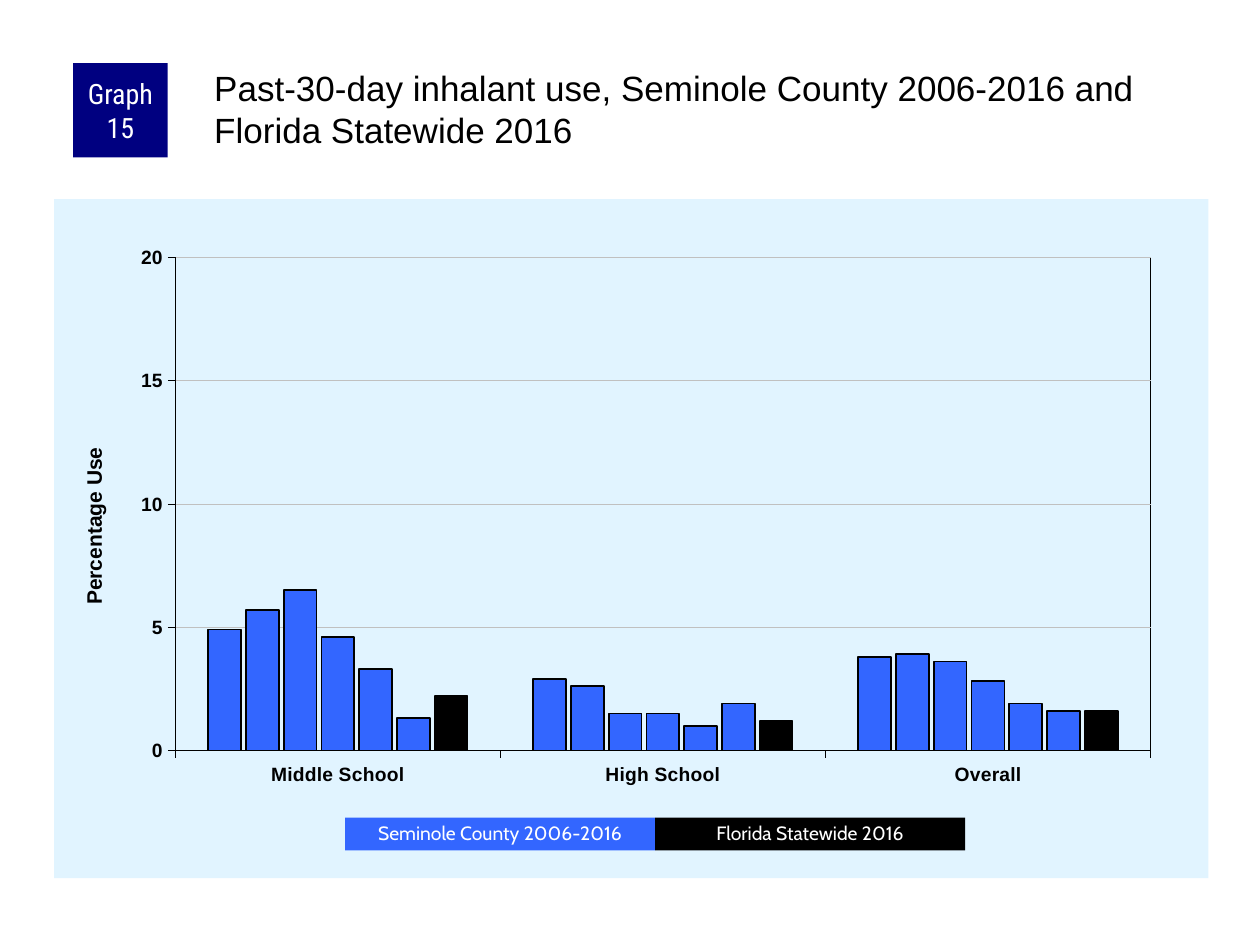
from dataclasses import dataclass

from lxml import etree
from pptx import Presentation
from pptx import util as u
from pptx.chart.data import CategoryChartData
from pptx.dml.color import RGBColor
from pptx.enum import chart as charts, shapes, text
from pptx.oxml import parse_xml
from pptx.oxml.ns import nsdecls, qn


@dataclass(frozen=True)
class Theme:
    navy: str = "000080"
    county: str = "3366FF"
    state: str = "000000"
    panel: str = "E1F4FF"
    grid: str = "C0C0C0"
    ink: str = "000000"
    light: str = "FFFFFF"
    body_font: str = "Arial"
    badge_font: str = "Roboto Condensed"
    legend_font: str = "Cabin"
    title_size: int = 20
    badge_size: int = 16
    axis_title_size: int = 12
    label_size: int = 11
    base_size: int = 8


THEME = Theme()
CATEGORIES = ["Middle School", "High School", "Overall"]
COUNTY_SERIES = [
    (4.9, 2.9, 3.8),
    (5.7, 2.6, 3.9),
    (6.5, 1.5, 3.6),
    (4.6, 1.5, 2.8),
    (3.3, 1, 1.9),
    (1.3, 1.9, 1.6),
]
STATE_SERIES = (2.2, 1.2, 1.6)


def set_font(font, size, color=THEME.ink, name=THEME.body_font, bold=False):
    font.size = u.Pt(size)
    font.name = name
    font.bold = bold
    font.color.rgb = RGBColor.from_string(color)


def write_text(frame, words, size, color=THEME.ink, name=THEME.body_font,
               align=text.PP_ALIGN.LEFT, anchor=text.MSO_ANCHOR.TOP,
               spacing=None, insets=(0.1, 0.05, 0.1, 0.05)):
    """Fill a text frame; insets are left, top, right, bottom in inches."""
    frame.word_wrap = True
    frame.auto_size = text.MSO_AUTO_SIZE.NONE
    frame.vertical_anchor = anchor
    (frame.margin_left, frame.margin_top,
     frame.margin_right, frame.margin_bottom) = map(u.Inches, insets)
    para = frame.paragraphs[0]
    para.alignment = align
    if spacing:
        para.line_spacing = spacing
    span = para.add_run()
    span.text = words
    set_font(span.font, size, color, name)


def set_line(line, color, width):
    line.color.rgb = RGBColor.from_string(color)
    line.width = u.Pt(width)


def area_style(fill=None, line=None):
    """Return chart shape properties with an optional fill and outline."""
    def solid(color):
        if color is None:
            return "<a:noFill/>"
        return f'<a:solidFill><a:srgbClr val="{color}"/></a:solidFill>'
    return parse_xml(f'<c:spPr {nsdecls("c", "a")}>{solid(fill)}'
                     f'<a:ln w="{u.Pt(0.25)}">{solid(line)}</a:ln></c:spPr>')


def manual_layout(inner=False, **places):
    """Return a chart layout whose places are fractions of the chart."""
    layout = etree.Element(qn("c:layout"))
    manual = etree.SubElement(layout, qn("c:manualLayout"))
    if inner:
        etree.SubElement(manual, qn("c:layoutTarget")).set("val", "inner")
    for mode in ("xMode", "yMode"):
        etree.SubElement(manual, qn(f"c:{mode}")).set("val", "edge")
    for key, value in places.items():
        etree.SubElement(manual, qn(f"c:{key}")).set("val", str(value))
    return layout


def replace_layout(parent, index, layout):
    for old in parent.findall(qn("c:layout")):
        parent.remove(old)
    parent.insert(index, layout)


class GraphPage:
    """Holds the theme and the slide being drawn."""

    def __init__(self, page, theme):
        self.page = page
        self.theme = theme

    def title(self, words, left, top, width, height):
        box = self.page.shapes.title
        box.left, box.top, box.width, box.height = map(
            u.Inches, (left, top, width, height))
        write_text(box.text_frame, words, self.theme.title_size,
                   insets=(0.03, 0.03, 0, 0))

    def label(self, words, left, top, width, height, fill, **style):
        box = self.page.shapes.add_shape(
            shapes.MSO_SHAPE.RECTANGLE,
            *map(u.Inches, (left, top, width, height)))
        box.shadow.inherit = False
        box.fill.solid()
        box.fill.fore_color.rgb = RGBColor.from_string(fill)
        box.line.fill.background()
        write_text(box.text_frame, words, color=self.theme.light,
                   align=text.PP_ALIGN.CENTER,
                   anchor=text.MSO_ANCHOR.MIDDLE, **style)

    def column_chart(self, left, top, width, height):
        theme = self.theme
        data = CategoryChartData()
        data.categories = CATEGORIES
        for number, values in enumerate([*COUNTY_SERIES, STATE_SERIES], 1):
            data.add_series(f"Series {number}", values)
        chart = self.page.shapes.add_chart(
            charts.XL_CHART_TYPE.COLUMN_CLUSTERED,
            *map(u.Inches, (left, top, width, height)), data).chart
        chart.has_legend = False
        chart.has_title = False
        set_font(chart.font, theme.base_size)

        plot = chart.plots[0]
        plot.gap_width = 200
        plot.overlap = -15
        plot.vary_by_categories = False
        colors = [theme.county] * len(COUNTY_SERIES) + [theme.state]
        for series, color in zip(plot.series, colors):
            series.format.fill.solid()
            series.format.fill.fore_color.rgb = RGBColor.from_string(color)
            set_line(series.format.line, theme.ink, 1)
        self.axes(chart)

        root = chart.element
        root.find(qn("c:chart")).addnext(area_style(fill=theme.panel))
        area = root.find(".//" + qn("c:plotArea"))
        replace_layout(area, 0, manual_layout(
            inner=True, x=0.105, y=0.086, w=0.845, h=0.726))
        area.append(area_style(line=theme.ink))

    def axes(self, chart):
        theme = self.theme
        for axis in (chart.category_axis, chart.value_axis):
            axis.major_tick_mark = charts.XL_TICK_MARK.OUTSIDE
            axis.minor_tick_mark = charts.XL_TICK_MARK.NONE
            set_font(axis.tick_labels.font, theme.label_size, bold=True)
            set_line(axis.format.line, theme.ink, 0.25)
        scale = chart.value_axis
        scale.minimum_scale, scale.maximum_scale = 0, 20
        scale.major_unit = 5
        scale.has_major_gridlines = True
        set_line(scale.major_gridlines.format.line, theme.grid, 0.25)
        scale.tick_labels.number_format = "0"
        scale.tick_labels.number_format_is_linked = False

        frame = scale.axis_title.text_frame
        span = frame.paragraphs[0].add_run()
        span.text = "Percentage Use"
        set_font(span.font, theme.axis_title_size, bold=True)
        body = scale.axis_title.element.find(".//" + qn("a:bodyPr"))
        body.set("rot", "-5400000")
        body.set("vert", "horz")
        replace_layout(scale.axis_title.element, 1,
                       manual_layout(x=0.02, y=0.36))


def main():
    deck = Presentation()
    deck.slide_width, deck.slide_height = u.Inches(10), u.Inches(7.5)
    graph = GraphPage(deck.slides.add_slide(deck.slide_layouts[5]), THEME)

    graph.column_chart(0.43, 1.58, 9.16, 5.39)
    graph.label("Graph 15", 0.58, 0.5, 0.75, 0.75, THEME.navy,
                size=THEME.badge_size, name=THEME.badge_font,
                insets=(0.05, 0, 0.05, 0))
    graph.title("Past-30-day inhalant use, Seminole County 2006-2016 and "
                "Florida Statewide 2016", 1.67, 0.5, 7.92, 0.83)

    key_left, key_width = 2.74, 2.46
    keys = [("Seminole County 2006-2016", THEME.county),
            ("Florida Statewide 2016", THEME.state)]
    for column, (words, fill) in enumerate(keys):
        graph.label(words, key_left + column * key_width, 6.49, key_width,
                    0.26, fill, size=THEME.label_size,
                    name=THEME.legend_font, spacing=0.9)
    deck.save("out.pptx")


if __name__ == "__main__":
    main()
